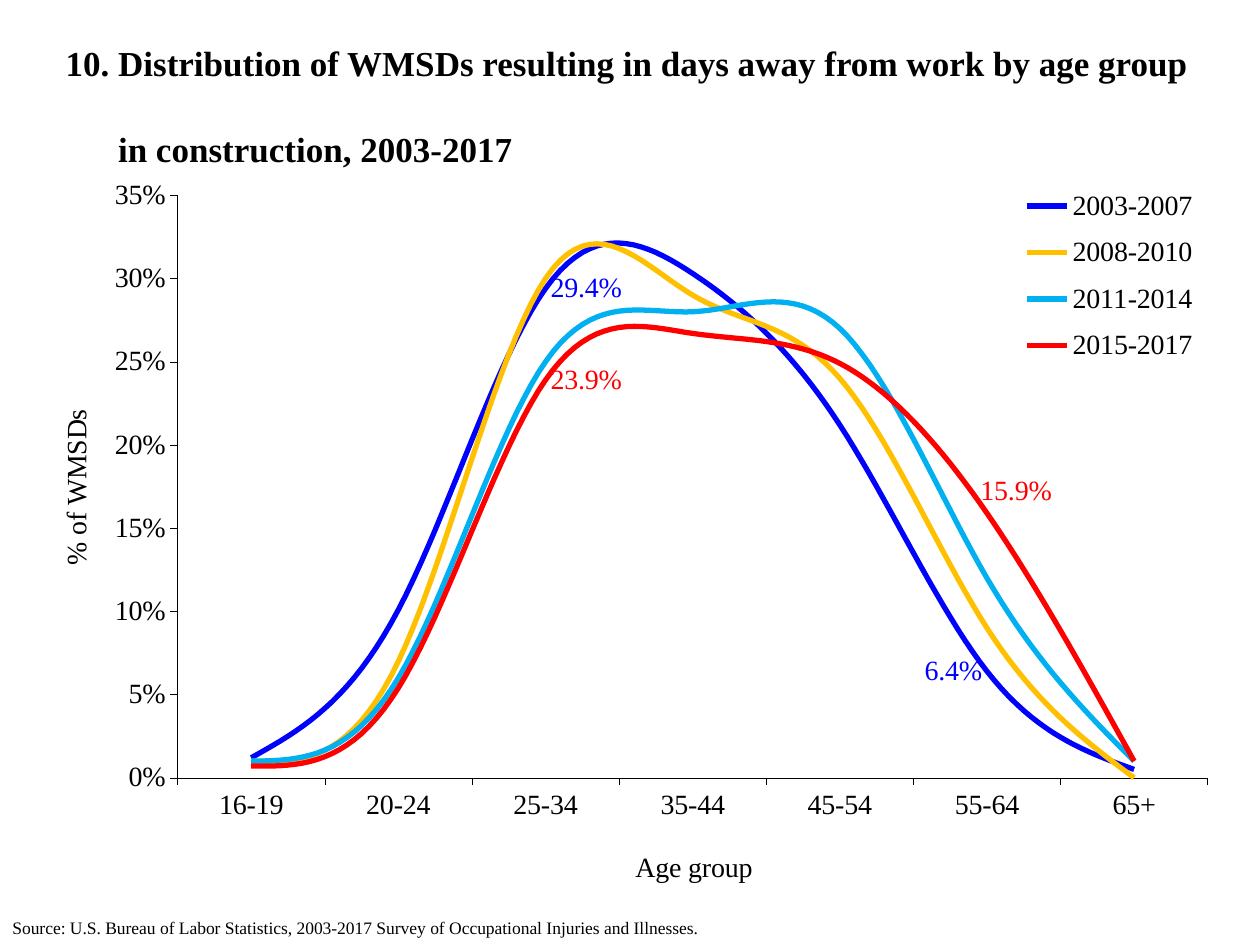
from dataclasses import dataclass

from lxml.etree import SubElement
from pptx import Presentation
from pptx.chart.data import CategoryChartData
from pptx.dml.color import RGBColor
from pptx.enum.chart import XL_CHART_TYPE as ChartType
from pptx.enum.chart import XL_LABEL_POSITION as LabelSide
from pptx.enum.chart import XL_LEGEND_POSITION as LegendSide
from pptx.enum.chart import XL_TICK_MARK as TickMark
from pptx.enum.text import MSO_ANCHOR as Anchor
from pptx.enum.text import MSO_AUTO_SIZE as AutoSize
from pptx.enum.text import PP_ALIGN as Align
from pptx.oxml.ns import qn
from pptx.util import Emu, Pt

PX_PER_INCH = 126


@dataclass(frozen=True)
class Theme:
    font: str = "Times New Roman"
    ink: str = "000000"
    title: int = 20
    chart: int = 16
    source: int = 10
    curve: int = 3
    axis: float = 0.25


@dataclass(frozen=True)
class Callout:
    point: int
    side: LabelSide
    shift: tuple = ()


@dataclass(frozen=True)
class Period:
    name: str
    color: str
    shares: tuple
    callouts: tuple = ()


THEME = Theme()
TITLE_LINES = (
    "10. Distribution of WMSDs resulting in days away from work by age group",
    "in construction, 2003-2017",
)
AGES = ("16-19", "20-24", "25-34", "35-44", "45-54", "55-64", "65+")
PERIODS = (
    Period("2003-2007", "0000FF", (0.012, 0.101, 0.294, 0.303, 0.212, 0.064, 0.005),
           (Callout(2, LabelSide.RIGHT), Callout(5, LabelSide.LEFT))),
    Period("2008-2010", "FFC000", (0.01, 0.07, 0.30, 0.29, 0.24, 0.09, 0)),
    Period("2011-2014", "00B0F0", (0.01, 0.06, 0.25, 0.28, 0.27, 0.12, 0.01)),
    Period("2015-2017", "FF0000", (0.007, 0.054, 0.239, 0.267, 0.249, 0.159, 0.010),
           (Callout(2, LabelSide.RIGHT), Callout(5, LabelSide.RIGHT, (-0.01, -0.03)))),
)


def px(length: int) -> Emu:
    return Emu(round(length * 914400 / PX_PER_INCH))


def area(left: int, top: int, width: int, height: int) -> tuple:
    return px(left), px(top), px(width), px(height)


def style_font(font, size: int, color: str = THEME.ink, bold: bool = False) -> None:
    font.name = THEME.font
    font.size = Pt(size)
    font.bold = bold
    font.color.rgb = RGBColor.from_string(color)


def add_span(para, text: str, size: int, bold: bool = False) -> None:
    span = para.add_run()
    span.text = text
    style_font(span.font, size, bold=bold)


def place(element, index: int, values: tuple, modes: tuple = ()) -> None:
    """Give a chart part a manual layout, in fractions of the chart."""
    for old in element.findall(qn("c:layout")):
        element.remove(old)
    layout = SubElement(element, qn("c:layout"))
    manual = SubElement(layout, qn("c:manualLayout"))
    settings = (*modes, *zip("xywh", values))
    for tag, value in settings:
        SubElement(manual, qn(f"c:{tag}")).set("val", str(value))
    element.insert(index, layout)


def add_title(slide) -> None:
    title = slide.shapes.title
    title.left, title.top, title.width, title.height = area(53, 53, 1155, 105)
    frame = title.text_frame
    frame.auto_size = AutoSize.NONE
    frame.vertical_anchor = Anchor.MIDDLE
    frame.margin_top = frame.margin_bottom = 0
    for number, line in enumerate(TITLE_LINES):
        para = frame.add_paragraph() if number else frame.paragraphs[0]
        para.alignment = Align.LEFT
        para.line_spacing = 1.0
        if number:
            # The second line starts under the first word after the number
            para.space_before = Pt(25.5)
            para._p.get_or_add_pPr().set("marL", str(Pt(30)))
        add_span(para, line, THEME.title, True)


def style_axis(axis, title: str, corner: tuple) -> None:
    axis.has_major_gridlines = False
    axis.major_tick_mark = TickMark.OUTSIDE
    axis.minor_tick_mark = TickMark.NONE
    axis.format.line.color.rgb = RGBColor.from_string(THEME.ink)
    axis.format.line.width = Pt(THEME.axis)
    style_font(axis.tick_labels.font, THEME.chart)
    add_span(axis.axis_title.text_frame.paragraphs[0], title, THEME.chart)
    place(axis.axis_title._element, 1, corner, (("xMode", "edge"), ("yMode", "edge")))


def style_curve(series, period: Period) -> None:
    color = RGBColor.from_string(period.color)
    series.smooth = True
    series.format.line.color.rgb = color
    series.format.line.width = Pt(THEME.curve)
    if not period.callouts:
        return
    labels = series.data_labels
    labels.show_value = False
    labels.number_format = "0.0%"
    labels.number_format_is_linked = False
    style_font(labels.font, THEME.chart, period.color)
    for callout in period.callouts:
        label = series.points[callout.point].data_label
        style_font(label.font, THEME.chart, period.color)
        label.position = callout.side
        if callout.shift:
            entry = next(item for item in labels._element.findall(qn("c:dLbl"))
                         if item.find(qn("c:idx")).get("val") == str(callout.point))
            place(entry, 1, callout.shift)


def add_age_chart(slide) -> None:
    data = CategoryChartData(number_format="0.0%")
    data.categories = AGES
    for period in PERIODS:
        data.add_series(period.name, period.shares)
    chart = slide.shapes.add_chart(ChartType.LINE, *area(53, 168, 1155, 724), data).chart
    chart.has_title = False
    style_font(chart.font, THEME.chart)
    plot = chart.plots[0]
    plot.vary_by_categories = False
    edges = (("xMode", "edge"), ("yMode", "edge"))
    place(chart._chartSpace.chart.plotArea, 0, (0.108, 0.038, 0.892, 0.81),
          (("layoutTarget", "inner"), *edges))

    # Axes
    style_axis(chart.category_axis, "Age group", (0.5, 0.94))
    value_axis = chart.value_axis
    style_axis(value_axis, "% of WMSDs", (0, 0.33))
    value_axis.minimum_scale, value_axis.maximum_scale = 0, 0.35
    value_axis.major_unit = 0.05
    value_axis.tick_labels.number_format = "0%"
    value_axis.tick_labels.number_format_is_linked = False

    # Curves and their called-out values
    for series, period in zip(plot.series, PERIODS):
        style_curve(series, period)

    # Legend over the top right of the plot
    chart.has_legend = True
    legend = chart.legend
    legend.position = LegendSide.CORNER
    legend.include_in_layout = False
    style_font(legend.font, THEME.chart)
    place(legend._element, 1, (0.83, 0.01, 0.17, 0.28), edges)


def add_source(slide) -> None:
    box = slide.shapes.add_textbox(*area(0, 911, 1008, 34))
    box.text_frame.word_wrap = True
    add_span(box.text_frame.paragraphs[0],
             "Source: U.S. Bureau of Labor Statistics, 2003-2017 Survey of "
             "Occupational Injuries and Illnesses.", THEME.source)


def main() -> None:
    deck = Presentation()
    deck.slide_width, deck.slide_height = px(1260), px(945)
    page = deck.slides.add_slide(deck.slide_layouts[5])
    add_title(page)
    add_age_chart(page)
    add_source(page)
    deck.save("out.pptx")


if __name__ == "__main__":
    main()
